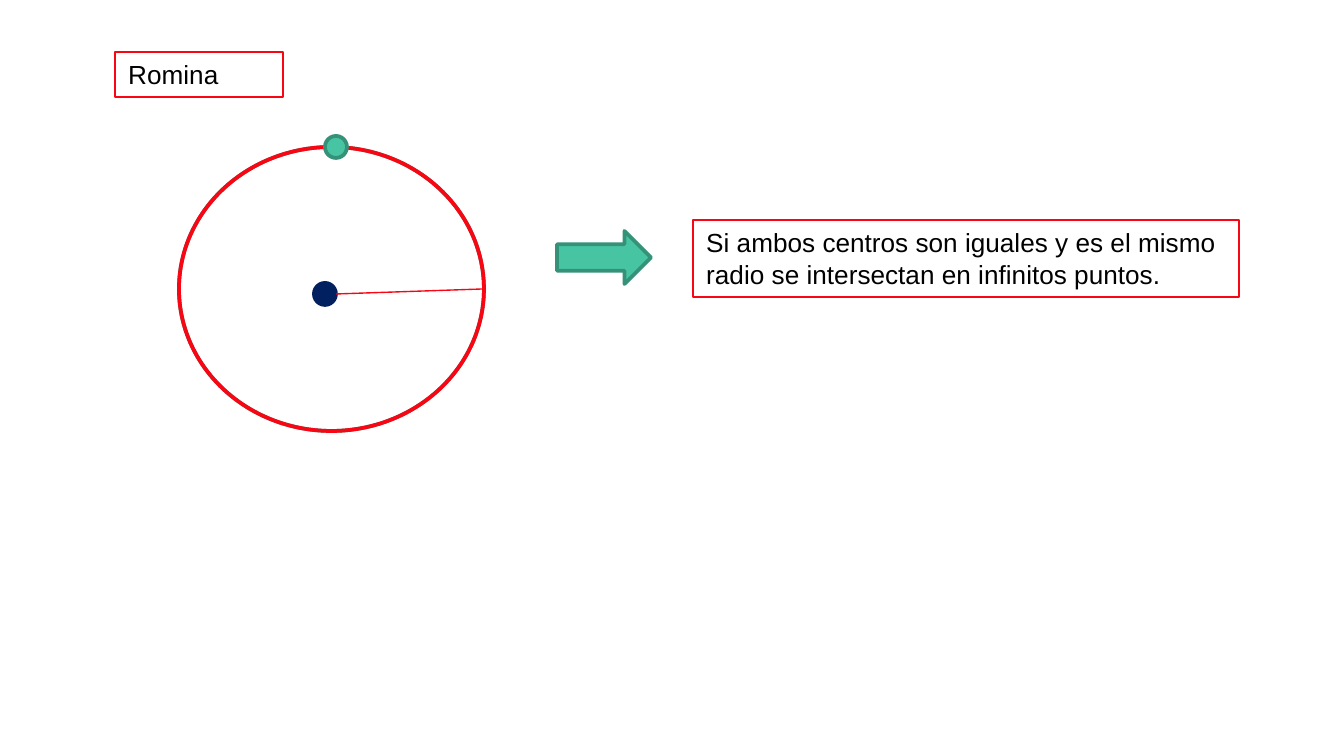
from lxml import etree
from pptx import Presentation
from pptx import util as u
from pptx.dml.color import RGBColor
from pptx.enum import shapes, text
from pptx.oxml.ns import qn

PX = 914400 / 134.4
COLORS = {
    "red": "F80613",
    "teal": "47C5A3",
    "dark_teal": "359279",
    "navy": "002060",
    "black": "000000",
}
KIND = shapes.MSO_SHAPE


def px(*lengths):
    return [u.Emu(round(length * PX)) for length in lengths]


def rgb(name):
    return RGBColor.from_string(COLORS[name])


prs = Presentation()
prs.slide_width, prs.slide_height = px(1344, 756)
slide = prs.slides.add_slide(prs.slide_layouts[6])

# Two coinciding circles, their shared centre and radius, a common point, the arrow
figures = [
    (KIND.OVAL, (179, 147, 305, 284), None, "dark_teal"),
    (KIND.OVAL, (314, 283, 22, 22), "navy", "navy"),
    (KIND.OVAL, (179, 147, 305, 284), None, "red"),
    (KIND.OVAL, (325, 136, 22, 22), "teal", "dark_teal"),
    (KIND.RIGHT_ARROW, (557, 231, 94, 53), "teal", "dark_teal"),
]
for kind, box, fill, line in figures:
    figure = slide.shapes.add_shape(kind, *px(*box))
    figure.shadow.inherit = False
    if fill:
        figure.fill.solid()
        figure.fill.fore_color.rgb = rgb(fill)
    else:
        figure.fill.background()
    figure.line.color.rgb = rgb(line)
    figure.line.width = u.Pt(2)

radius = slide.shapes.add_connector(
    shapes.MSO_CONNECTOR.STRAIGHT, *px(336, 294, 483, 289))
radius.line.color.rgb = rgb("red")
radius.line.width = u.Pt(0.75)
etree.SubElement(radius._element.spPr, qn("a:effectLst"))

labels = [
    ((115, 52, 168, 45), "Romina"),
    ((693, 220, 546, 77),
     "Si ambos centros son iguales y es el mismo radio se intersectan en infinitos puntos."),
]
for box, wording in labels:
    label = slide.shapes.add_textbox(*px(*box))
    label.line.color.rgb = rgb("red")
    label.line.width = u.Pt(0.75)
    label.text_frame.word_wrap = True
    label.text_frame.auto_size = text.MSO_AUTO_SIZE.SHAPE_TO_FIT_TEXT
    run = label.text_frame.paragraphs[0].add_run()
    run.text = wording
    run.font.name = "Arial"
    run.font.size = u.Pt(14)
    run.font.color.rgb = rgb("black")

prs.save("out.pptx")
